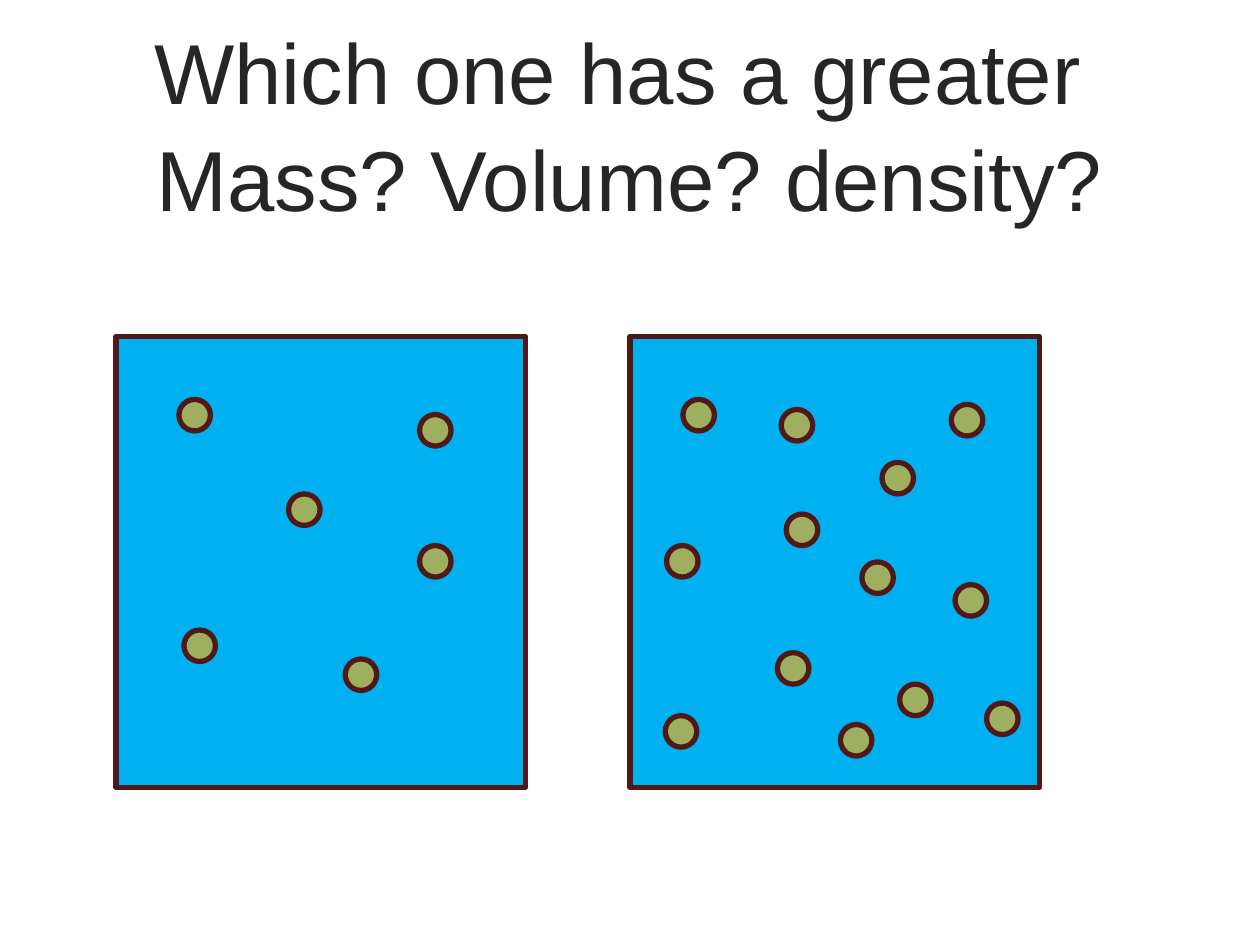
from pptx import Presentation
from pptx import util as u
from pptx.dml.color import RGBColor
from pptx.enum import shapes, text

PX = u.Inches(1) // 100  # 100 px to the inch
COLORS = {"text": "262626", "water": "00B0F0", "particle": "9EB060", "outline": "511818"}

TITLE = "Which one has a greater \vMass? Volume? density?"
TITLE_BOX = (79, 34, 841, 125)
BOX_TOP, BOX_W, BOX_H = 267, 325, 358
DOT = 25
# Each box: its left edge, and the top-left corner of each particle inside it
BOXES = [
    (92, [(50, 50), (54, 233), (137, 125), (241, 166), (241, 62), (182, 256)]),
    (500, [(167, 308), (283, 291), (120, 58), (255, 54), (184, 179), (28, 301),
           (214, 276), (258, 197), (124, 141), (117, 251), (29, 166), (200, 100),
           (42, 50)]),
]


def color(name):
    return RGBColor.from_string(COLORS[name])


def add_outlined(s, kind, box, fill):
    sp = s.shapes.add_shape(kind, *(v * PX for v in box))
    sp.shadow.inherit = False
    sp.fill.solid()
    sp.fill.fore_color.rgb = color(fill)
    sp.line.color.rgb = color("outline")
    sp.line.width = u.Pt(3)


def add_title(s):
    sp = s.shapes.title
    sp.left, sp.top, sp.width, sp.height = (v * PX for v in TITLE_BOX)
    tf = sp.text_frame
    tf.text = TITLE
    tf.word_wrap = True
    tf.auto_size = text.MSO_AUTO_SIZE.NONE
    tf.vertical_anchor = text.MSO_ANCHOR.MIDDLE
    p = tf.paragraphs[0]
    p.alignment = text.PP_ALIGN.CENTER
    p.line_spacing = 1.05
    p.font.name, p.font.size = "Arial", u.Pt(48.6)
    p.font.color.rgb = color("text")


def main():
    prs = Presentation()
    prs.slide_width, prs.slide_height = 1000 * PX, 750 * PX
    s = prs.slides.add_slide(prs.slide_layouts[5])
    add_title(s)
    for left, particles in BOXES:
        add_outlined(s, shapes.MSO_SHAPE.RECTANGLE, (left, BOX_TOP, BOX_W, BOX_H), "water")
        for x, y in particles:
            add_outlined(s, shapes.MSO_SHAPE.FLOWCHART_CONNECTOR,
                         (left + x, BOX_TOP + y, DOT, DOT), "particle")
    prs.save("out.pptx")


if __name__ == "__main__":
    main()
